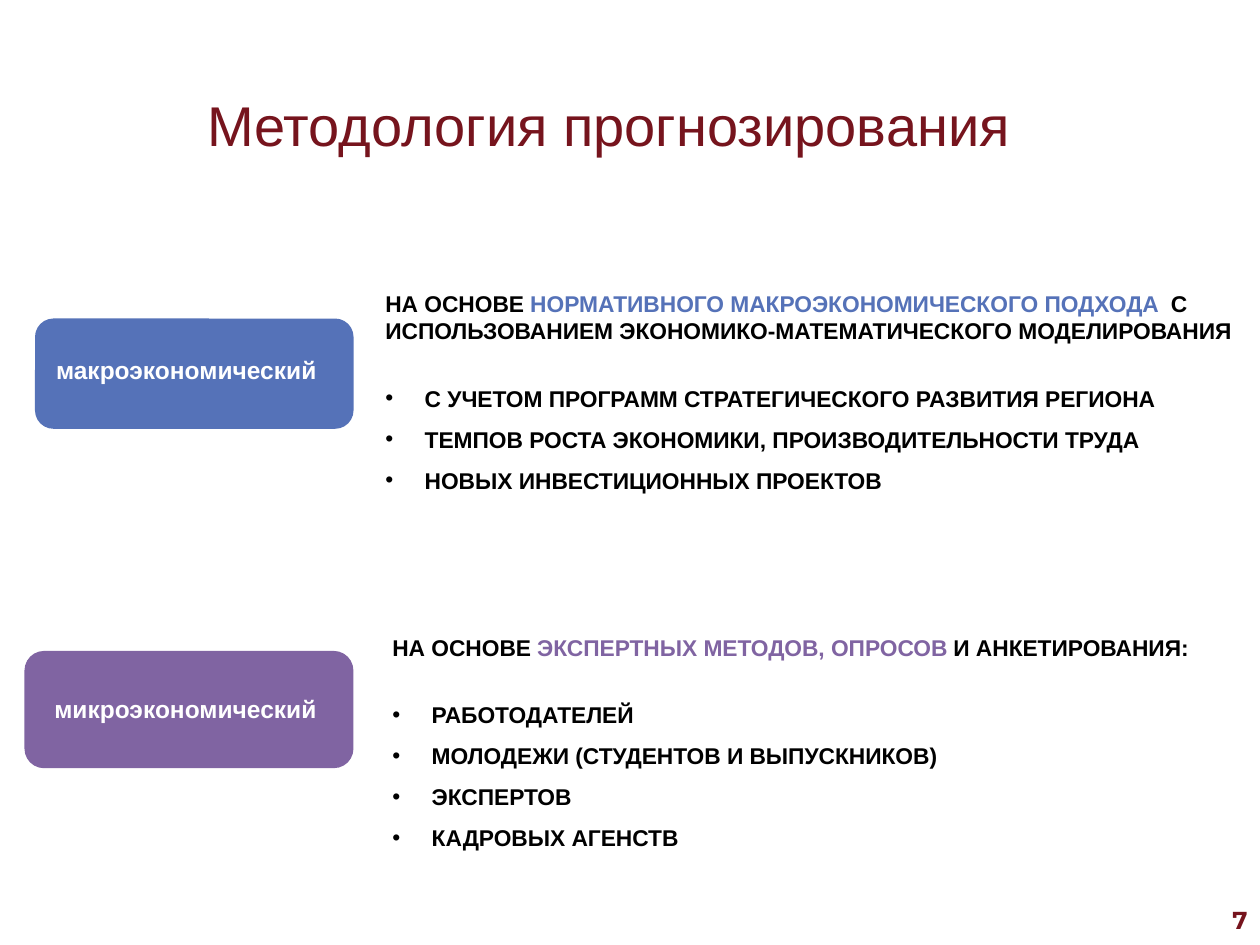
import pptx
import pptx.util
import pptx.dml.color
import pptx.enum.shapes
import pptx.enum.text
import pptx.oxml
import pptx.oxml.ns

Pt = pptx.util.Pt
ALIGN = pptx.enum.text.PP_ALIGN
MAROON, BLUE, PURPLE = "76141D", "5572B8", "8064A2"
BLACK, WHITE = "000000", "FFFFFF"
BULLET_INDENT = 22.5


def rgb(value):
    return pptx.dml.color.RGBColor.from_string(value)


def place(sp, left, top, width, height):
    sp.left, sp.top, sp.width, sp.height = Pt(left), Pt(top), Pt(width), Pt(height)


def format_run(r, size, color, bold=True, name="Arial"):
    r.font.size = Pt(size)
    r.font.name = name
    r.font.bold = bold
    r.font.color.rgb = rgb(color)


def set_bullet(p, char=None):
    """Give the paragraph a hanging bullet, or none and no indent."""
    pPr = p._p.get_or_add_pPr()
    indent = Pt(BULLET_INDENT) if char else 0
    pPr.set("marL", str(indent))
    pPr.set("indent", str(-indent))
    tag = "a:buChar" if char else "a:buNone"
    bullet = pptx.oxml.parse_xml(f"<{tag} {pptx.oxml.ns.nsdecls('a')}/>")
    if char:
        bullet.set("char", char)
    pPr.append(bullet)


def fill_title(sp, text):
    place(sp, 48, 26, 600, 90)
    tf = sp.text_frame
    tf.text = text
    tf.vertical_anchor = pptx.enum.text.MSO_ANCHOR.MIDDLE
    p = tf.paragraphs[0]
    p.alignment = ALIGN.CENTER
    format_run(p.runs[0], 32, MAROON, bold=False)


def add_card(s, box, color):
    shape_type = pptx.enum.shapes.MSO_SHAPE.ROUNDED_RECTANGLE
    sp = s.shapes.add_shape(shape_type, *map(Pt, box))
    sp.shadow.inherit = False
    sp.fill.solid()
    sp.fill.fore_color.rgb = rgb(color)
    sp.line.fill.background()


def add_text(s, box, text, size, color, align, name="Arial"):
    sp = s.shapes.add_textbox(*map(Pt, box))
    tf = sp.text_frame
    tf.word_wrap = True
    tf.vertical_anchor = pptx.enum.text.MSO_ANCHOR.MIDDLE
    tf.text = text
    p = tf.paragraphs[0]
    p.alignment = align
    format_run(p.runs[0], size, color, name=name)


def fill_list(sp, box, heading, accent, items):
    """Write a heading whose middle part is accented, then a bulleted list."""
    place(sp, *box)
    tf = sp.text_frame
    tf.word_wrap = True
    tf.auto_size = pptx.enum.text.MSO_AUTO_SIZE.NONE
    p = tf.paragraphs[0]
    set_bullet(p)
    p.space_before = Pt(0)
    p.space_after = Pt(15)
    for text, color in zip(heading, (BLACK, accent, BLACK)):
        r = p.add_run()
        r.text = text
        format_run(r, 13, color)
    for item in items:
        p = tf.add_paragraph()
        p.text = item
        set_bullet(p, "•")
        p.space_before = Pt(0)
        p.line_spacing = 1.5
        format_run(p.runs[0], 13, BLACK)


def main():
    prs = pptx.Presentation()
    prs.slide_width, prs.slide_height = Pt(720), Pt(540)
    s = prs.slides.add_slide(prs.slide_layouts.get_by_name("Two Content"))
    fill_title(s.shapes.title, "Методология прогнозирования")

    add_card(s, (20, 182, 182, 63), BLUE)
    add_text(s, (11, 199, 191, 24), "макроэкономический", 14, WHITE, ALIGN.CENTER)
    fill_list(
        s.placeholders[1], (213, 162, 505, 125),
        ("НА ОСНОВЕ ", "НОРМАТИВНОГО МАКРОЭКОНОМИЧЕСКОГО ПОДХОДА  ",
         "С ИСПОЛЬЗОВАНИЕМ ЭКОНОМИКО-МАТЕМАТИЧЕСКОГО МОДЕЛИРОВАНИЯ"),
        BLUE,
        ("С УЧЕТОМ ПРОГРАММ СТРАТЕГИЧЕСКОГО РАЗВИТИЯ РЕГИОНА",
         "ТЕМПОВ РОСТА ЭКОНОМИКИ, ПРОИЗВОДИТЕЛЬНОСТИ ТРУДА",
         "НОВЫХ ИНВЕСТИЦИОННЫХ ПРОЕКТОВ"))

    add_card(s, (14, 372, 188, 67), PURPLE)
    add_text(s, (18, 393, 176, 24), "микроэкономический", 14, WHITE, ALIGN.CENTER)
    fill_list(
        s.placeholders[2], (217, 358.5, 499, 133),
        ("НА ОСНОВЕ ", "ЭКСПЕРТНЫХ МЕТОДОВ, ОПРОСОВ ", "И АНКЕТИРОВАНИЯ:"),
        PURPLE,
        ("РАБОТОДАТЕЛЕЙ", "МОЛОДЕЖИ (СТУДЕНТОВ И ВЫПУСКНИКОВ)",
         "ЭКСПЕРТОВ", "КАДРОВЫХ АГЕНСТВ"))

    add_text(s, (552, 511, 168, 29), "7", 14, MAROON, ALIGN.RIGHT, "Montserrat")
    prs.save("out.pptx")


if __name__ == "__main__":
    main()
